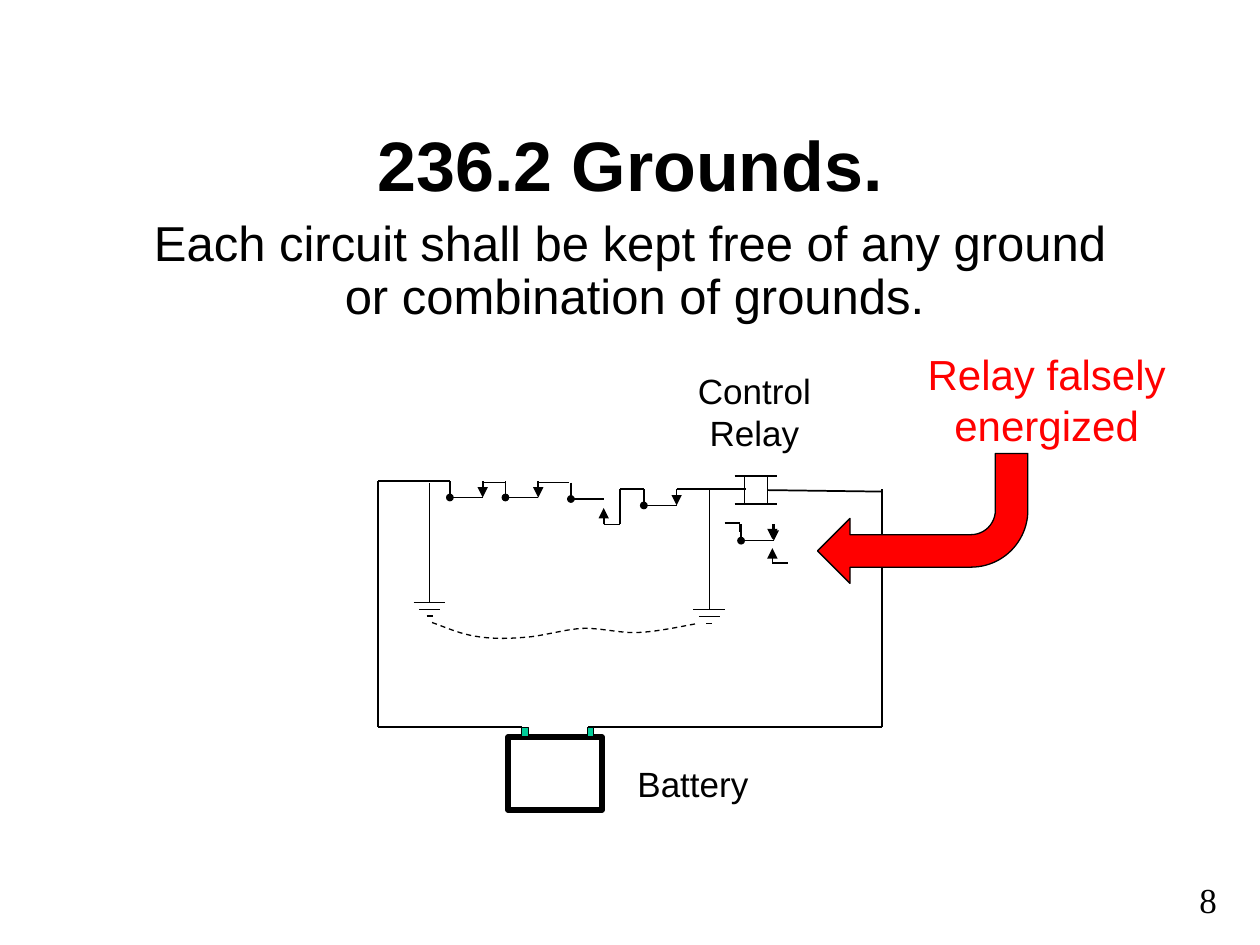
import pptx
import pptx.util
import pptx.dml.color
import pptx.oxml
import pptx.oxml.ns
import pptx.enum.dml
import pptx.enum.shapes
import pptx.enum.text

Cm, Pt = pptx.util.Cm, pptx.util.Pt
SHAPE = pptx.enum.shapes.MSO_SHAPE
ALIGN = pptx.enum.text.PP_ALIGN
ANCHOR = pptx.enum.text.MSO_ANCHOR
COLORS = {"black": "000000", "white": "FFFFFF", "red": "FF0000", "green": "00CC99"}
RGB = {name: pptx.dml.color.RGBColor.from_string(c) for name, c in COLORS.items()}

prs = pptx.Presentation()
prs.slide_width, prs.slide_height = Cm(25.4), Cm(19.05)
s = prs.slides.add_slide(prs.slide_layouts[5])


def wire(points, width=1, arrow=False):
    """Join the points with straight connectors; an arrow ends each one."""
    for (x1, y1), (x2, y2) in zip(points, points[1:]):
        ln = s.shapes.add_connector(pptx.enum.shapes.MSO_CONNECTOR.STRAIGHT,
                                    Cm(x1), Cm(y1), Cm(x2), Cm(y2))
        ln.line.color.rgb = RGB["black"]
        ln.line.width = Pt(width)
        if arrow:
            tail = pptx.oxml.ns.qn("a:tailEnd")
            ln.line._get_or_add_ln().append(
                ln.element.makeelement(tail, {"type": "triangle"}))
        ln.element.spPr.append(ln.element.makeelement(pptx.oxml.ns.qn("a:effectLst"), {}))


def block(kind, x, y, w, h, fill, width=0.75):
    sp = s.shapes.add_shape(kind, Cm(x), Cm(y), Cm(w), Cm(h))
    sp.shadow.inherit = False
    sp.fill.solid()
    sp.fill.fore_color.rgb = RGB[fill]
    sp.line.color.rgb = RGB["black"]
    sp.line.width = Pt(width)
    return sp


# Relay contacts: (left, top, closed)
for x, y, closed in [(9.07, 9.7, True), (10.19, 9.7, True), (12.98, 9.86, True),
                     (11.51, 9.73, False), (14.94, 10.57, True)]:
    right, heel = x + 0.66, y + 0.33
    wire([(x, y), (x, heel)])
    if closed:
        wire([(right, y), (right, heel)], arrow=True)
    else:
        wire([(right, y + 0.84), (right, y + 0.51)], arrow=True)
    wire([(x, heel), (right, heel)], 0.75)
    block(SHAPE.OVAL, x - 0.065, heel - 0.065, 0.13, 0.13, "black")

# Circuit wiring
top, bottom, left, right = 9.7, 14.66, 7.62, 17.78
wire([(10.85, 9.73), (11.48, 9.73)], 0.75)
wire([(9.73, 9.73), (10.19, 9.73)], 0.75)
wire([(12.17, 10.57), (12.5, 10.57), (12.5, 9.86), (12.98, 9.86)], 0.75)
wire([(13.64, 9.86), (15.04, 9.86)])
wire([(9.07, top), (left, top)])
wire([(left, top), (left, bottom)], 0.75)
wire([(left, bottom), (10.52, bottom)])
wire([(15.47, 9.88), (right, 9.91)])
wire([(right, 9.86), (right, bottom), (11.86, bottom)])

# Control relay coil
for y in (9.6, 10.16):
    wire([(14.81, y), (15.67, y)])
for x in (15.01, 15.47):
    wire([(x, 9.6), (x, 10.16)])

# Battery and its posts
block(SHAPE.RECTANGLE, 10.24, 14.86, 1.9, 1.47, "white", 3)
for x in (10.52, 11.84):
    block(SHAPE.RECTANGLE, x, bottom, 0.13, 0.2, "green")

# Ground symbols
for x, y in [(14.3, 9.88), (8.66, 9.73)]:
    wire([(x, y), (x, y + 2.41)], 0.75)
    for i, half in enumerate((0.32, 0.21, 0.06)):
        bar = y + 2.41 + 0.14 * i
        wire([(x - half, bar), (x + half, bar)], 0.75)

# Dashed earth path, sampled from cubic curves
start = (8.71, 12.55)
curves = [((8.99, 12.65), (9.27, 12.78), (9.6, 12.83)),
          ((9.91, 12.88), (10.21, 12.88), (10.57, 12.85)),
          ((10.92, 12.83), (11.33, 12.7), (11.71, 12.67)),
          ((12.12, 12.65), (12.52, 12.78), (12.9, 12.75)),
          ((13.31, 12.73), (13.87, 12.6), (14.07, 12.57))]
path_points = [start]
for c1, c2, end in curves:
    for step in range(1, 13):
        t = step / 12
        path_points.append(tuple(
            (1 - t) ** 3 * a + 3 * (1 - t) ** 2 * t * b + 3 * (1 - t) * t ** 2 * c + t ** 3 * d
            for a, b, c, d in zip(start, c1, c2, end)))
    start = end
emu = [(Cm(x), Cm(y)) for x, y in path_points]
fb = s.shapes.build_freeform(*emu[0])
fb.add_line_segments(emu[1:], close=False)
sp = fb.convert_to_shape()
sp.shadow.inherit = False
sp.fill.background()
sp.line.color.rgb = RGB["black"]
sp.line.width = Pt(0.75)
sp.line.dash_style = pptx.enum.dml.MSO_LINE.DASH

# Back contact below the relay
wire([(14.61, 10.54), (14.91, 10.54), (14.91, 10.72)])
wire([(15.57, 11.35), (15.57, 11.05)], arrow=True)
wire([(15.88, 11.35), (15.57, 11.35)])
wire([(15.57, 10.57), (15.57, 10.87)], arrow=True)

block(SHAPE.BENT_ARROW, 16.48, 9.14, 4.24, 2.62, "red").rotation = 180

# Texts: box, paragraphs with alignment, size, font, colour, wrap
C, L = ALIGN.CENTER, ALIGN.LEFT
texts = [
    ((1.9, 1.7, 21.6, 3.18), [("236.2 Grounds.", C)], 40, "Arial", "black", True),
    ((2.64, 4.29, 20.12, 2.54),
     [("Each circuit shall be kept free of any ground or combination of grounds.", C)],
     28, "Arial", "black", True),
    ((13.82, 7.32, 2.82, 1.96), [("Control", L), ("Relay", C)], 20, "Arial", "black", False),
    ((12.6, 15.24, 2.77, 1.12), [("Battery", L)], 20, "Arial", "black", False),
    ((18.42, 6.91, 5.36, 2.31), [("Relay falsely", C), ("energized", C)],
     24, "Arial", "red", False),
    ((23.93, 17.58, 1.22, 1.09), [("8", L)], 20, "Times New Roman", "black", False),
]
boxes = []
for i, (box, paragraphs, size, font, color, wrap) in enumerate(texts):
    sp = s.shapes.title if i == 0 else s.shapes.add_textbox(0, 0, 0, 0)
    for name, value in zip(("left", "top", "width", "height"), box):
        setattr(sp, name, Cm(value))
    tf = sp.text_frame
    tf.word_wrap = wrap
    tf.vertical_anchor = ANCHOR.MIDDLE if i == 0 else ANCHOR.TOP
    for j, (text, align) in enumerate(paragraphs):
        p = tf.add_paragraph() if j else tf.paragraphs[0]
        p.alignment = align
        r = p.add_run()
        r.text = text
        for name, value in {"size": Pt(size), "name": font, "bold": i == 0}.items():
            setattr(r.font, name, value)
        r.font.color.rgb = RGB[color]
    boxes.append(sp)

rule = boxes[1].text_frame.paragraphs[0]
rule.line_spacing = 0.9
for name, value in {"marL": Cm(0.18), "indent": Cm(-0.18)}.items():
    rule._p.get_or_add_pPr().set(name, str(value))

prs.save("out.pptx")
